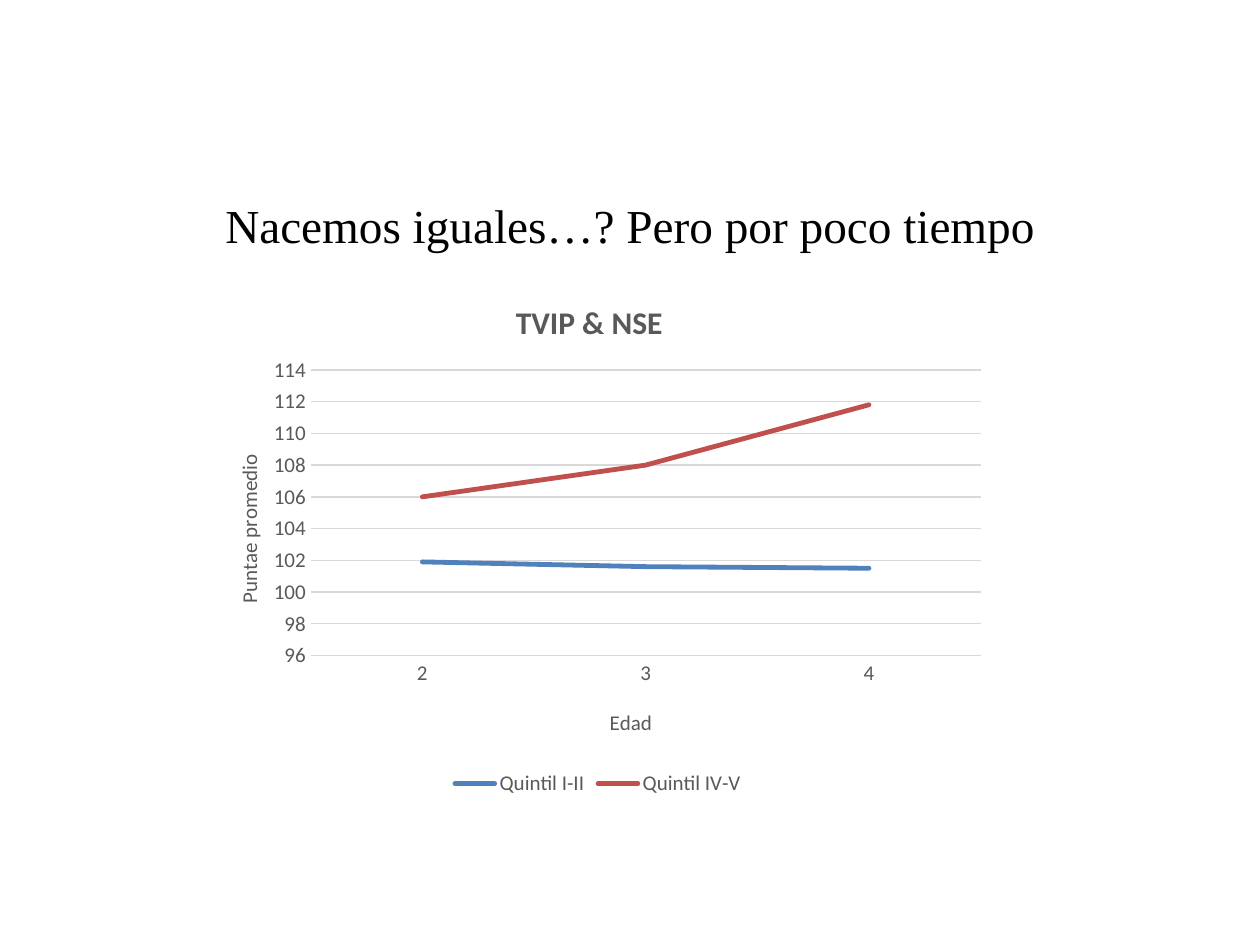
from lxml import etree
from pptx import Presentation
from pptx.chart.data import CategoryChartData
from pptx.dml.color import RGBColor
from pptx.enum.chart import XL_CHART_TYPE, XL_LEGEND_POSITION, XL_MARKER_STYLE, XL_TICK_MARK
from pptx.enum.text import MSO_ANCHOR, PP_ALIGN
from pptx.oxml.ns import qn
from pptx.util import Inches, Pt

LINE_CHART = XL_CHART_TYPE.LINE
BOTTOM = XL_LEGEND_POSITION.BOTTOM
NO_MARKER = XL_MARKER_STYLE.NONE
NO_TICK = XL_TICK_MARK.NONE
MIDDLE = MSO_ANCHOR.MIDDLE
CENTER = PP_ALIGN.CENTER

BLACK = RGBColor(0x00, 0x00, 0x00)
GRAY = RGBColor(0x59, 0x59, 0x59)
LIGHT_GRAY = RGBColor(0xD9, 0xD9, 0xD9)
BLUE = RGBColor(0x4F, 0x81, 0xBD)
RED = RGBColor(0xC0, 0x50, 0x4D)


def set_layout(element, **fractions):
    """Place a chart part by fractions of the chart's width and height."""
    old_layout = element.find(qn("c:layout"))
    if old_layout is not None:
        element.remove(old_layout)
    layout = etree.Element(qn("c:layout"))
    manual = etree.SubElement(layout, qn("c:manualLayout"))
    if "w" in fractions:
        etree.SubElement(manual, qn("c:layoutTarget"), val="inner")
    for mode in ("xMode", "yMode"):
        etree.SubElement(manual, qn(f"c:{mode}"), val="edge")
    for name, value in fractions.items():
        etree.SubElement(manual, qn(f"c:{name}"), val=str(value))
    element.insert(0 if element.find(qn("c:tx")) is None else 1, layout)


def write_title(title, text, size, bold, x, y):
    title.text_frame.text = text
    font = title.text_frame.paragraphs[0].runs[0].font
    font.name = "Calibri"
    font.size = Pt(size)
    font.bold = bold
    font.color.rgb = GRAY
    set_layout(title._element, x=x, y=y)


deck = Presentation()
deck.slide_width = Inches(10)
deck.slide_height = Inches(7.5)
page = deck.slides.add_slide(deck.slide_layouts[6])

# Chart
data = CategoryChartData(number_format="General")
data.categories = ["2", "3", "4"]
data.add_series("Quintil I-II", [101.9, 101.6, 101.5])
data.add_series("Quintil IV-V", [106, 108, 111.8])
chart = page.shapes.add_chart(
    LINE_CHART, Inches(1.58), Inches(2.08), Inches(6.33), Inches(4.28), data
).chart
chart.font.name = "Calibri"
chart.font.size = Pt(10)
chart.font.color.rgb = BLACK

plot = chart.plots[0]
plot.vary_by_categories = False
for series, color in zip(plot.series, (BLUE, RED)):
    series.smooth = False
    series.marker.style = NO_MARKER
    series.format.line.color.rgb = color
    series.format.line.width = Pt(2.75)
    series.format.line._get_or_add_ln().set("cap", "rnd")

# Axes
ages = chart.category_axis
scores = chart.value_axis
for axis in (ages, scores):
    axis.major_tick_mark = NO_TICK
    axis.minor_tick_mark = NO_TICK
    axis.tick_labels.font.name = "Calibri"
    axis.tick_labels.font.size = Pt(12)
    axis.tick_labels.font.color.rgb = GRAY
ages.format.line.color.rgb = LIGHT_GRAY
ages.format.line.width = Pt(1)
scores.format.line.fill.background()
scores.minimum_scale = 96
scores.maximum_scale = 114
scores.major_unit = 2
scores.has_major_gridlines = True
scores.major_gridlines.format.line.color.rgb = LIGHT_GRAY
scores.major_gridlines.format.line.width = Pt(0.75)

# Chart titles, plot area and legend
chart.has_title = True
write_title(chart.chart_title, "TVIP & NSE", 18, True, 0.39, 0.06)
write_title(ages.axis_title, "Edad", 12, False, 0.51, 0.82)
write_title(scores.axis_title, "Puntae promedio", 12, False, 0.04, 0.35)
score_body = scores.axis_title._element.find(".//" + qn("a:bodyPr"))
score_body.set("rot", "-5400000")
score_body.set("vert", "horz")
set_layout(chart._chartSpace.find(".//" + qn("c:plotArea")), x=0.14, y=0.2, w=0.84, h=0.53)

chart.has_legend = True
chart.legend.position = BOTTOM
chart.legend.include_in_layout = False
chart.legend.font.name = "Calibri"
chart.legend.font.size = Pt(12)
chart.legend.font.color.rgb = GRAY

# Heading
heading = page.shapes.add_textbox(Inches(0.69), Inches(1.24), Inches(8.62), Inches(1.09))
heading.text_frame.word_wrap = True
heading.text_frame.vertical_anchor = MIDDLE
para = heading.text_frame.paragraphs[0]
para.text = "Nacemos iguales…? Pero por poco tiempo"
para.alignment = CENTER
span = para.runs[0]
span.font.name = "Times New Roman"
span.font.size = Pt(27)
span.font.color.rgb = BLACK

deck.save("out.pptx")
